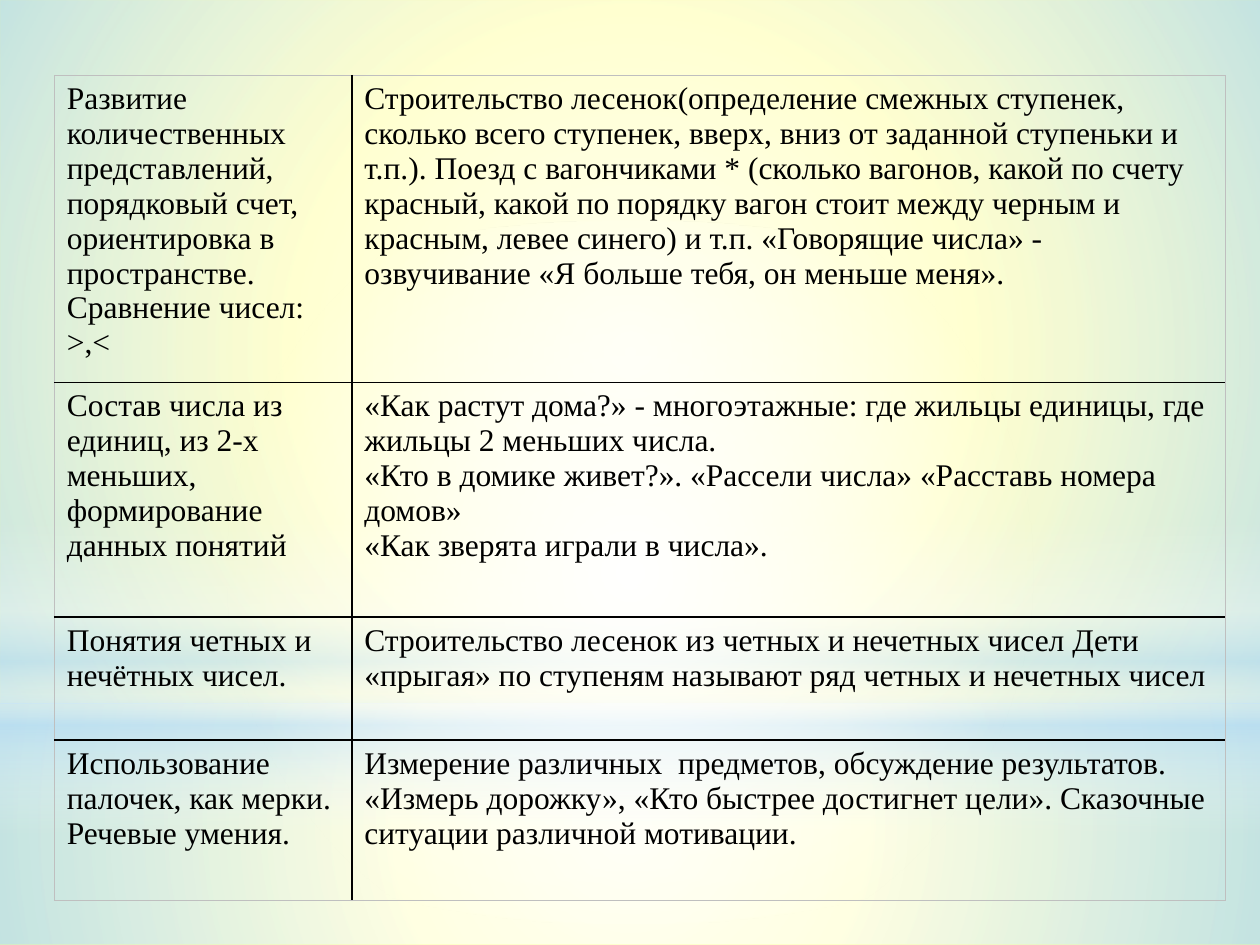
import dataclasses

import lxml.etree
import pptx
import pptx.dml.color
import pptx.enum.shapes
import pptx.oxml.ns
import pptx.util

Pt = pptx.util.Pt
RGB = pptx.dml.color.RGBColor.from_string
SHAPE = pptx.enum.shapes.MSO_SHAPE
qn = pptx.oxml.ns.qn


@dataclasses.dataclass(frozen=True)
class Theme:
    font: str = "Times New Roman"
    size: float = 18
    ink: str = "000000"
    frame: str = "BFBFBF"
    ground: str = "FFFF82"
    white: str = "FFFFFF"
    sky: str = "B4DCFA"
    rule: float = 1
    hairline: float = 0.5


def sub(parent, tag, **attrs):
    return lxml.etree.SubElement(parent, qn(tag), {k: str(v) for k, v in attrs.items()})


def write(tf, text, *, font, size, color):
    tf.word_wrap = True
    for i, line in enumerate(text.split("\n")):
        p = tf.paragraphs[0] if i == 0 else tf.add_paragraph()
        r = p.add_run()
        r.text = line
        r.font.name = font
        r.font.size = Pt(size)
        r.font.color.rgb = RGB(color)


class Deck:
    """Holds the theme and the current slide and draws each kind of element."""

    def __init__(self, theme, width, height):
        self.theme = theme
        self.prs = pptx.Presentation()
        self.prs.slide_width, self.prs.slide_height = Pt(width), Pt(height)
        self.s = None

    def slide(self):
        self.s = self.prs.slides.add_slide(self.prs.slide_layouts[6])
        fill = self.s.background.fill
        fill.solid()
        fill.fore_color.rgb = RGB(self.theme.ground)

    def glow(self, kind, box, stops, angle=None):
        sp = self.s.shapes.add_shape(kind, *map(Pt, box))
        sp.shadow.inherit = False
        sp.line.fill.background()
        grad = lxml.etree.Element(qn("a:gradFill"), rotWithShape="1")
        gs_list = sub(grad, "a:gsLst")
        for pos, color, alpha in stops:
            gs = sub(gs_list, "a:gs", pos=pos * 1000)
            clr = sub(gs, "a:srgbClr", val=color)
            sub(clr, "a:alpha", val=alpha * 1000)
        if angle is None:
            circle = sub(grad, "a:path", path="circle")
            sub(circle, "a:fillToRect", l=50000, t=50000, r=50000, b=50000)
        else:
            sub(grad, "a:lin", ang=angle * 60000, scaled=0)
        sp.element.spPr.find(qn("a:prstGeom")).addnext(grad)

    def borders(self, cell, outer):
        t = self.theme
        pr = cell._tc.get_or_add_tcPr()
        for i, side in enumerate("LRTB"):
            color, width = (t.frame, t.hairline) if side in outer else (t.ink, t.rule)
            ln = sub(pr, f"a:ln{side}", w=int(Pt(width)))
            sub(sub(ln, "a:solidFill"), "a:srgbClr", val=color)
            pr.insert(i, ln)

    def table(self, left, top, widths, heights, rows):
        t = self.theme
        nr, nc = len(heights), len(widths)
        box = map(Pt, (left, top, sum(widths), sum(heights)))
        tbl = self.s.shapes.add_table(nr, nc, *box).table
        tbl.first_row = tbl.horz_banding = False
        for col, width in zip(tbl.columns, widths):
            col.width = Pt(width)
        for i, (row, height) in enumerate(zip(tbl.rows, heights)):
            row.height = Pt(height)
            for j, cell in enumerate(row.cells):
                cell.fill.background()
                edges = {"L": j == 0, "R": j == nc - 1, "T": i == 0, "B": i == nr - 1}
                self.borders(cell, [side for side, on in edges.items() if on])
                write(cell.text_frame, rows[i][j], font=t.font, size=t.size, color=t.ink)


ROWS = [
    ("Развитие количественных представлений, порядковый счет, ориентировка в "
     "пространстве. Сравнение чисел: >,<",
     "Строительство лесенок(определение смежных ступенек, сколько всего ступенек, "
     "вверх, вниз от заданной ступеньки и т.п.). Поезд с вагончиками * (сколько "
     "вагонов, какой по счету красный, какой по порядку вагон стоит между черным и "
     "красным, левее синего) и т.п. «Говорящие числа» - озвучивание «Я больше тебя, "
     "он меньше меня»."),
    ("Состав числа из единиц, из 2-х меньших, формирование данных понятий",
     "«Как растут дома?» - многоэтажные: где жильцы единицы, где жильцы 2 меньших числа.\n"
     "«Кто в домике живет?». «Рассели числа» «Расставь номера домов»\n"
     "«Как зверята играли в числа»."),
    ("Понятия четных и нечётных чисел.",
     "Строительство лесенок из четных и нечетных чисел Дети «прыгая» по ступеням "
     "называют ряд четных и нечетных чисел"),
    ("Использование палочек, как мерки. Речевые умения.",
     "Измерение различных  предметов, обсуждение результатов.\n"
     "«Измерь дорожку», «Кто быстрее достигнет цели». Сказочные ситуации различной "
     "мотивации."),
]


def main():
    t = Theme()
    width, height, horizon = 720, 540, 402
    deck = Deck(t, width, height)
    deck.slide()
    deck.glow(SHAPE.RECTANGLE, (0, horizon, width, height - horizon),
              [(0, t.white, 91), (37, t.white, 76), (100, t.sky, 79)])
    deck.glow(SHAPE.RECTANGLE, (0, 0, width, horizon),
              [(0, t.white, 89), (48, t.white, 62), (100, t.sky, 79)])
    deck.glow(SHAPE.RECTANGLE, (0, 297, width, 180),
              [(0, t.white, 0), (29, t.white, 30), (45, t.sky, 40),
               (55, t.white, 26), (65, t.sky, 60), (100, t.white, 0)], angle=90)
    deck.glow(SHAPE.OVAL, (0, 126, width, horizon), [(0, t.white, 100), (56, t.white, 0)])
    deck.table(31, 43, (170, 499), (175.5, 134, 70.5, 91.5), ROWS)
    deck.prs.save("out.pptx")


if __name__ == "__main__":
    main()
